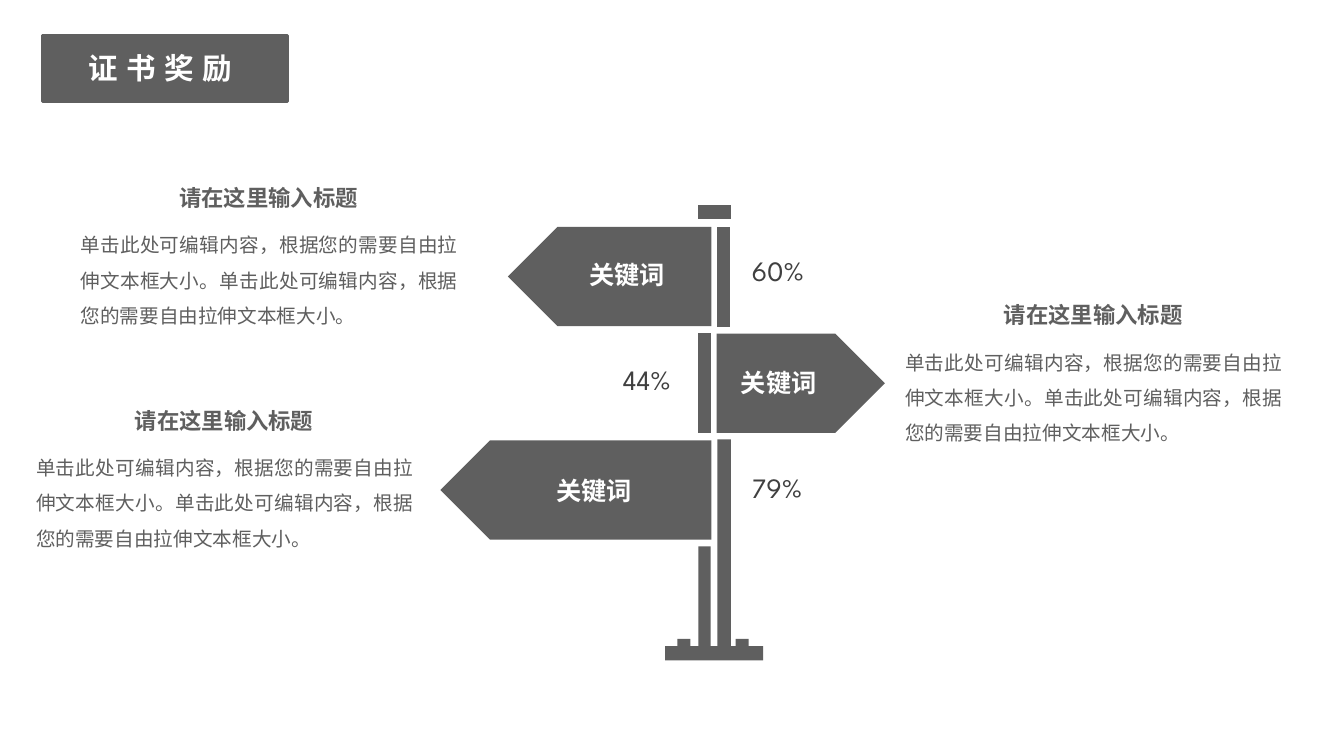
"""Build the signpost slide on certificates and awards."""
from dataclasses import dataclass

import lxml.etree
import pptx
import pptx.dml.color
import pptx.enum.shapes
import pptx.enum.text
import pptx.oxml.ns
import pptx.util

Cm = pptx.util.Cm
ALIGN = pptx.enum.text.PP_ALIGN
SHAPE = pptx.enum.shapes.MSO_SHAPE


@dataclass(frozen=True)
class Theme:
    """Colours, fonts and type sizes of the slide."""
    grey: str = "5F5F5F"
    dark: str = "404040"
    white: str = "FFFFFF"
    text_font: str = "Noto Sans CJK SC"
    number_font: str = "League Spartan"
    title: float = 21.1
    number: float = 20
    keyword: float = 18
    heading: float = 16
    body: float = 14


THEME = Theme()
HEADING = "请在这里输入标题"
BODY = "单击此处可编辑内容，根据您的需要自由拉伸文本框大小。" * 2
BODY_CORNERS = [(1.78, 5.46), (0.66, 11.07), (22.56, 8.41)]

SIGN_TOP, SIGN_STEP, SIGN_HEIGHT = 5.72, 2.69, 2.5
LABEL_TOP, LABEL_STEP = 6.4, 2.73
SIGNS = [
    dict(left=12.8, width=5.13, points_left=True, keyword_left=14.6,
         percent="60%", percent_left=18.95),
    dict(left=18.06, width=4.24, points_left=False, keyword_left=18.42,
         percent="44%", percent_left=15.49),
    dict(left=11.1, width=6.83, points_left=True, keyword_left=13.77,
         percent="79%", percent_left=18.95),
]

POST_PIECES = [(18.08, 5.71, 18.4, 8.23), (17.58, 5.16, 18.42, 5.51), (17.6, 8.38, 17.91, 10.9)]
BASE_TOP, BASE_BOTTOM, BOLT_TOP = 16.28, 16.64, 16.1
BASE_LEFT, BASE_RIGHT = 16.76, 19.23
BASE_TEETH = [(17.07, 17.4, BOLT_TOP), (17.6, 17.91, 13.77),
              (18.08, 18.42, 11.07), (18.54, 18.87, BOLT_TOP)]


def paint(shape, line_width=None):
    """Fill a shape with grey, without shadow, and outline it if asked."""
    shape.shadow.inherit = False
    colour = pptx.dml.color.RGBColor.from_string(THEME.grey)
    shape.fill.solid()
    shape.fill.fore_color.rgb = colour
    if line_width:
        shape.line.color.rgb = colour
        shape.line.width = pptx.util.Pt(line_width)
    else:
        shape.line.fill.background()


def add_block(slide, kind, left, top, width, height, flip=False, line_width=None):
    """Add a grey preset shape, mirrored if asked."""
    shape = slide.shapes.add_shape(kind, Cm(left), Cm(top), Cm(width), Cm(height))
    paint(shape, line_width)
    if flip:
        shape.element.spPr.xfrm.set("flipH", "1")


def add_outline(slide, points):
    """Add a closed grey outline through points given in centimetres."""
    start, *others = [(Cm(x), Cm(y)) for x, y in points]
    builder = slide.shapes.build_freeform(*start)
    builder.add_line_segments(others, close=True)
    paint(builder.convert_to_shape())


def add_text(slide, text, left, top, width, height, *, size, colour, bold=False,
             font_name=THEME.text_font, align=ALIGN.LEFT, wrap=True, inset=True,
             line_spacing=None, tracking=None):
    """Add a text box holding one formatted paragraph."""
    box = slide.shapes.add_textbox(Cm(left), Cm(top), Cm(width), Cm(height))
    frame = box.text_frame
    frame.word_wrap = wrap
    if not inset:
        frame.margin_left = frame.margin_right = 0
        frame.margin_top = frame.margin_bottom = 0
    paragraph = frame.paragraphs[0]
    paragraph.alignment = align
    if line_spacing:
        paragraph.line_spacing = line_spacing
    run = paragraph.add_run()
    run.text = text
    run.font.size = pptx.util.Pt(size)
    run.font.bold = bold
    run.font.color.rgb = pptx.dml.color.RGBColor.from_string(colour)
    run.font.name = font_name
    properties = run.font._element
    lxml.etree.SubElement(properties, pptx.oxml.ns.qn("a:ea"), typeface=font_name)
    if tracking:
        properties.set("spc", str(tracking * 100))


def add_title(slide):
    """Add the title on its grey plate."""
    add_block(slide, SHAPE.RECTANGLE, 1.07, 0.89, 6.17, 1.68, line_width=2.25)
    add_text(slide, "证书奖励", 1.98, 1.14, 4.34, 1.17, size=THEME.title,
             colour=THEME.white, bold=True, wrap=False, tracking=6)


def add_post(slide):
    """Add the pieces of the post and its bolted base."""
    for left, top, right, bottom in POST_PIECES:
        add_outline(slide, [(left, top), (right, top), (right, bottom), (left, bottom)])
    points = [(BASE_LEFT, BASE_BOTTOM), (BASE_LEFT, BASE_TOP)]
    for left, right, top in BASE_TEETH:
        points += [(left, BASE_TOP), (left, top), (right, top), (right, BASE_TOP)]
    points += [(BASE_RIGHT, BASE_TOP), (BASE_RIGHT, BASE_BOTTOM)]
    add_outline(slide, points)


def add_sign(slide, index, left, width, points_left, keyword_left, percent, percent_left):
    """Add one sign with its keyword and the percentage across the post."""
    add_block(slide, SHAPE.PENTAGON, left, SIGN_TOP + index * SIGN_STEP, width,
              SIGN_HEIGHT, flip=points_left)
    label_top = LABEL_TOP + index * LABEL_STEP
    add_text(slide, percent, percent_left, label_top, 1.42, 1.17, size=THEME.number,
             colour=THEME.dark, font_name=THEME.number_font, wrap=False, inset=False,
             align=ALIGN.LEFT if points_left else ALIGN.RIGHT)
    add_text(slide, "关键词", keyword_left, label_top, 2.54, 1.02, size=THEME.keyword,
             colour=THEME.white, bold=True)


def add_description(slide, left, top):
    """Add a centred heading above a justified body text."""
    add_text(slide, HEADING, left + 1.09, top - 0.94, 7.8, 0.94, size=THEME.heading,
             colour=THEME.grey, bold=True, align=ALIGN.CENTER)
    add_text(slide, BODY, left, top, 10.01, 2.95, size=THEME.body,
             colour=THEME.grey, align=ALIGN.JUSTIFY, line_spacing=1.5)


def main():
    """Build and save the slide."""
    presentation = pptx.Presentation()
    presentation.slide_width, presentation.slide_height = Cm(33.87), Cm(19.05)
    slide = presentation.slides.add_slide(presentation.slide_layouts[6])
    add_title(slide)
    add_post(slide)
    for index, sign in enumerate(SIGNS):
        add_sign(slide, index, **sign)
    for left, top in BODY_CORNERS:
        add_description(slide, left, top)
    presentation.save("out.pptx")


if __name__ == "__main__":
    main()
